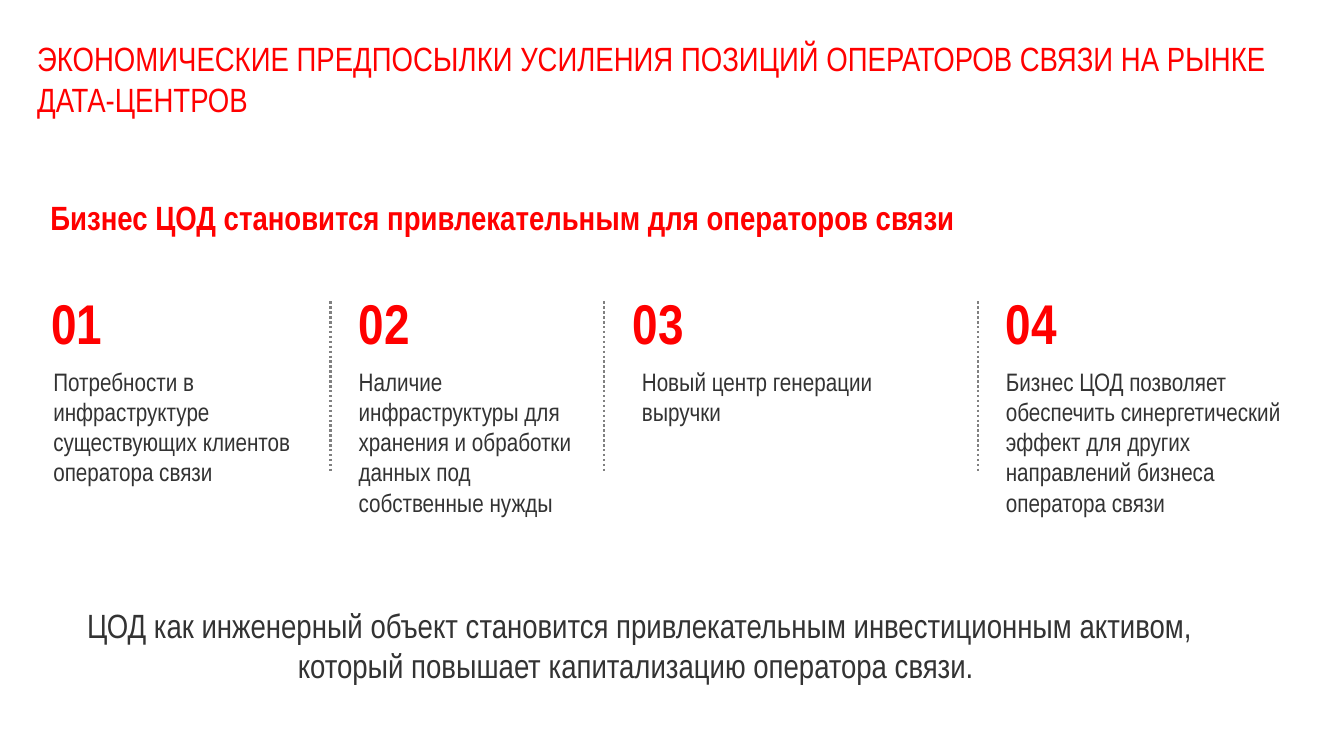
"""Build the slide on why data centres become attractive to telecom operators."""
from pptx import Presentation
from pptx.dml.color import RGBColor
from pptx.enum.dml import MSO_LINE
from pptx.enum.shapes import MSO_CONNECTOR
from pptx.enum.text import MSO_ANCHOR, MSO_AUTO_SIZE, PP_ALIGN
from pptx.oxml.ns import qn
from pptx.util import Pt
from lxml import etree

RED = RGBColor(0xFF, 0x00, 0x00)
DARK = RGBColor(0x33, 0x33, 0x33)
GRAY = RGBColor(0x80, 0x80, 0x80)
FONT = "Arial Narrow"
STRAIGHT = MSO_CONNECTOR.STRAIGHT
DOTTED = MSO_LINE.ROUND_DOT
TOP, MIDDLE, BOTTOM = MSO_ANCHOR.TOP, MSO_ANCHOR.MIDDLE, MSO_ANCHOR.BOTTOM
GROW, FIXED = MSO_AUTO_SIZE.SHAPE_TO_FIT_TEXT, MSO_AUTO_SIZE.NONE
CENTER = PP_ALIGN.CENTER

NUMBER_TOP, NUMBER_WIDTH, NUMBER_HEIGHT = 202.3, 51, 55.4
REASON_TOP = 257.8
DIVIDER_TOP, DIVIDER_BOTTOM = 215.3, 336.2


def add_text(shapes, text, left, top, width, height, size, color, bold=False,
             anchor=TOP, wrap=True, auto_size=GROW):
    """Add a one-paragraph text box and return its text frame."""
    shape = shapes.add_textbox(Pt(left), Pt(top), Pt(width), Pt(height))
    frame = shape.text_frame
    frame.word_wrap = wrap
    frame.auto_size = auto_size
    frame.vertical_anchor = anchor
    paragraph = frame.paragraphs[0]
    paragraph.text = text
    paragraph.font.name = FONT
    paragraph.font.size = Pt(size)
    paragraph.font.bold = bold
    paragraph.font.color.rgb = color
    return frame


presentation = Presentation()
presentation.slide_width = Pt(960)
presentation.slide_height = Pt(540)
slide = presentation.slides.add_slide(presentation.slide_layouts[6])

heading = add_text(
    slide.shapes, "Бизнес ЦОД становится привлекательным для операторов связи",
    36, 140.4, 874.8, 28.8, 24, RED, bold=True, anchor=BOTTOM)
heading.margin_left = heading.margin_right = 0
heading.margin_top = heading.margin_bottom = 0

reasons = [
    (29.5, 31, 220.3, 94.3, 9,
     "Потребности в инфраструктуре существующих клиентов оператора связи"),
    (249.1, 249.1, 174.2, 159.8, 9,
     "Наличие инфраструктуры для хранения и обработки данных под собственные нужды"),
    (445, 451.4, 234, 51.1, 6,
     "Новый центр генерации выручки"),
    (711.4, 711.4, 218.2, 116.6, 9,
     "Бизнес ЦОД позволяет обеспечить синергетический эффект для других "
     "направлений бизнеса оператора связи"),
]
for number, (number_left, left, width, height, space_after, text) in enumerate(reasons, 1):
    group = slide.shapes.add_group_shape()
    reason = add_text(group.shapes, text, left, REASON_TOP, width, height, 18, DARK)
    reason.paragraphs[0].space_after = Pt(space_after)
    add_text(group.shapes, f"{number:02}", number_left, NUMBER_TOP, NUMBER_WIDTH,
             NUMBER_HEIGHT, 40, RED, bold=True, wrap=False)

for x in (236.2, 431.3, 698.4):
    divider = slide.shapes.add_connector(
        STRAIGHT, Pt(x), Pt(DIVIDER_TOP), Pt(x), Pt(DIVIDER_BOTTOM))
    divider.line.color.rgb = GRAY
    divider.line.width = Pt(1.75)
    divider.line.dash_style = DOTTED
    etree.SubElement(divider.element.spPr, qn("a:effectLst"))

title = add_text(
    slide.shapes,
    "ЭКОНОМИЧЕСКИЕ ПРЕДПОСЫЛКИ УСИЛЕНИЯ ПОЗИЦИЙ ОПЕРАТОРОВ СВЯЗИ НА РЫНКЕ ДАТА-ЦЕНТРОВ",
    26.6, 35.3, 905, 41.8, 24, RED, anchor=MIDDLE, auto_size=FIXED)
title.margin_left = 0

conclusion = add_text(
    slide.shapes,
    "ЦОД как инженерный объект становится привлекательным инвестиционным активом, "
    "который повышает капитализацию оператора связи. ",
    36.7, 428.4, 840.2, 65.5, 24, DARK)
conclusion.paragraphs[0].alignment = CENTER

presentation.save("out.pptx")
